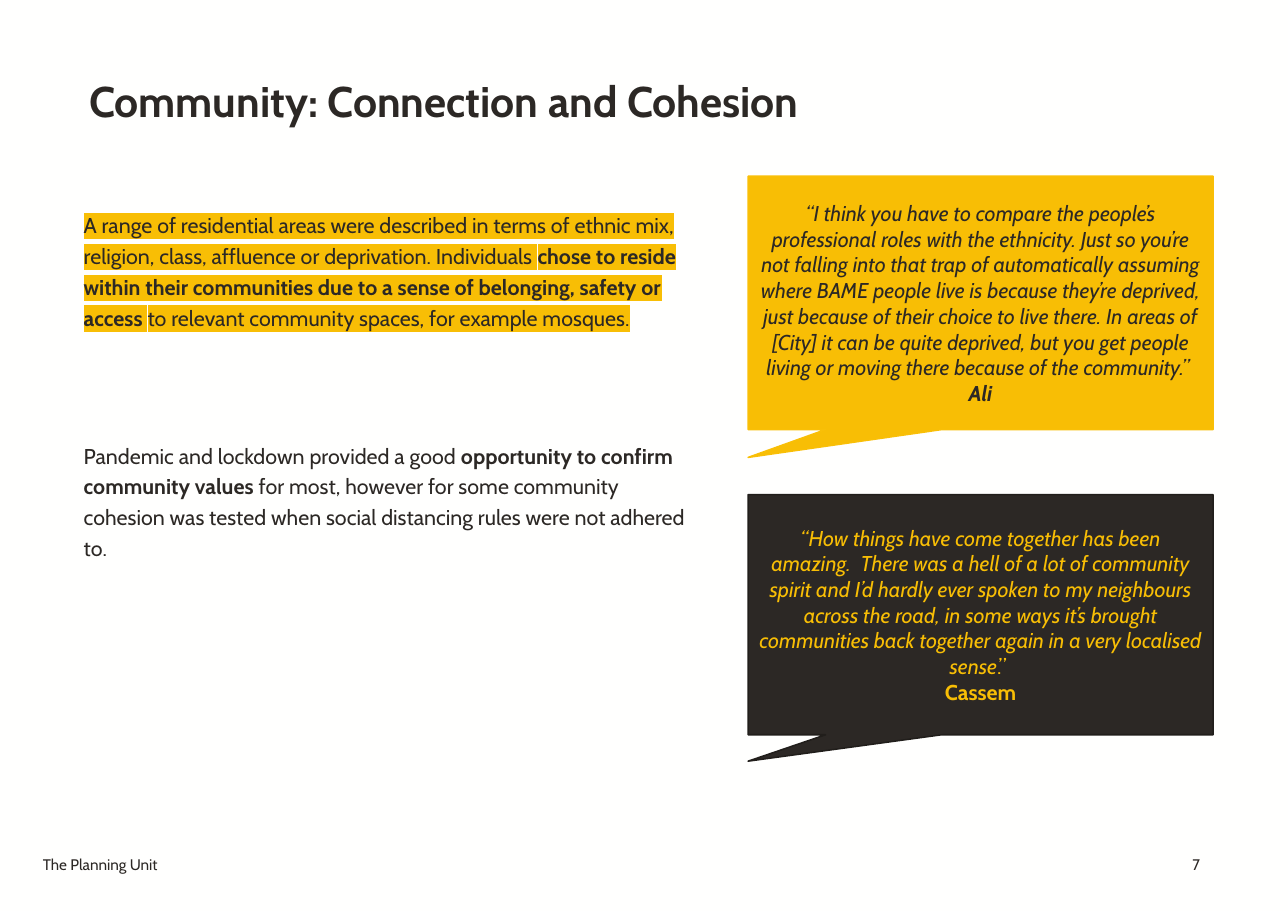
from lxml import etree
from pptx import Presentation
from pptx.dml.color import RGBColor
from pptx.enum import shapes, text
from pptx.oxml import ns
from pptx.util import Inches, Pt

THEME = {
    "font": "Cabin",
    "paper": "FFFFFE", "ink": "2C2825", "yellow": "F8BE05",
    "yellow_edge": "F9BF07", "ink_edge": "211E1B",
    "title": 28, "body": 14, "footer": 10,
}

# Content: a paragraph is a list of (text, style) runs; styles are b, i or empty
TITLE = "Community: Connection and Cohesion"
FINDINGS = [
    [("A range of residential areas were described in terms of ethnic mix, religion, class, "
      "affluence or deprivation. Individuals ", ""),
     ("chose to reside within their communities due to a sense of belonging, safety or access ", "b"),
     ("to relevant community spaces, for example mosques.", "")],
    [("Pandemic and lockdown provided a good ", ""),
     ("opportunity to confirm community values ", "b"),
     ("for most, however for some community cohesion was tested when social distancing rules "
      "were not adhered to.", "")],
]
QUOTES = [
    {"top": 1.6, "height": 2.3, "fill": "yellow", "edge": "yellow_edge", "color": "ink",
     "paragraphs": [
         [("“I think you have to compare the people’s professional roles with the ethnicity. "
           "Just so you’re not falling into that trap of automatically assuming where BAME people "
           "live is because they’re deprived, just because of their choice to live there. In areas "
           "of [City] it can be quite deprived, but you get people living or moving there because "
           "of the community.” ", "i")],
         [("Ali", "bi")]]},
    {"top": 4.49, "height": 2.18, "fill": "ink", "edge": "ink_edge", "color": "yellow",
     "paragraphs": [
         [("“How things have come together has been amazing.  There was a hell of a lot of "
           "community spirit and I’d hardly ever spoken to my neighbours across the road, in some "
           "ways it’s brought communities back together again in a very localised sense", "i"),
          (".” ", "")],
         [("Cassem", "b")]]},
]
FOOTERS = [("The Planning Unit", 0.31, 1.28, text.PP_ALIGN.LEFT),
           ("7", 10.18, 0.79, text.PP_ALIGN.RIGHT)]

QUOTE_LEFT, QUOTE_WIDTH = 6.79, 4.22
QUOTE_TAIL = (-0.5, 0.61)
FOOTER_TOP, FOOTER_HEIGHT = 7.68, 0.4
INSET = 0.08


def color(name):
    return RGBColor.from_string(THEME[name])


def write(frame, paragraphs, size, ink="ink", align=text.PP_ALIGN.LEFT):
    frame.word_wrap = True
    for index, runs in enumerate(paragraphs):
        paragraph = frame.paragraphs[0] if index == 0 else frame.add_paragraph()
        paragraph.alignment = align
        paragraph.font.name = THEME["font"]
        paragraph.font.size = Pt(THEME[size])
        paragraph.font.color.rgb = color(ink)
        for words, style in runs:
            run = paragraph.add_run()
            run.text = words
            run.font.bold = "b" in style
            run.font.italic = "i" in style


def add_text(slide, box, paragraphs, size, **options):
    frame = slide.shapes.add_textbox(*map(Inches, box)).text_frame
    frame.margin_left = frame.margin_right = Inches(INSET)
    frame.margin_top = frame.margin_bottom = Inches(INSET)
    write(frame, paragraphs, size, **options)
    return frame


def highlight(run, name):
    mark = etree.SubElement(run.font._element, ns.qn("a:highlight"))
    etree.SubElement(mark, ns.qn("a:srgbClr"), val=THEME[name])


def add_quote(slide, quote):
    shape = slide.shapes.add_shape(
        shapes.MSO_SHAPE.RECTANGULAR_CALLOUT, Inches(QUOTE_LEFT), Inches(quote["top"]),
        Inches(QUOTE_WIDTH), Inches(quote["height"]))
    shape.adjustments[0], shape.adjustments[1] = QUOTE_TAIL
    shape.shadow.inherit = False
    shape.fill.solid()
    shape.fill.fore_color.rgb = color(quote["fill"])
    shape.line.color.rgb = color(quote["edge"])
    shape.line.width = Pt(1)
    shape.text_frame.vertical_anchor = text.MSO_ANCHOR.MIDDLE
    write(shape.text_frame, quote["paragraphs"], "body", ink=quote["color"],
          align=text.PP_ALIGN.CENTER)


def main():
    presentation = Presentation()
    presentation.slide_width, presentation.slide_height = Inches(11.69), Inches(8.27)
    slide = presentation.slides.add_slide(presentation.slide_layouts[6])
    slide.background.fill.solid()
    slide.background.fill.fore_color.rgb = color("paper")

    # Title
    title = add_text(slide, (0.73, 0.43, 10.24, 0.79), [[(TITLE, "b")]], "title")
    title.vertical_anchor = text.MSO_ANCHOR.BOTTOM

    # Findings, the first one highlighted
    findings = add_text(slide, (0.68, 1.8, 5.66, 5.63), FINDINGS, "body")
    for paragraph in findings.paragraphs:
        paragraph.line_spacing = 1.2
    findings.paragraphs[0].space_after = Pt(70)
    for run in findings.paragraphs[0].runs:
        highlight(run, "yellow")

    # Quotes
    for quote in QUOTES:
        add_quote(slide, quote)

    # Footer
    for words, left, width, align in FOOTERS:
        add_text(slide, (left, FOOTER_TOP, width, FOOTER_HEIGHT), [[(words, "")]], "footer",
                 align=align)

    presentation.save("out.pptx")


if __name__ == "__main__":
    main()
